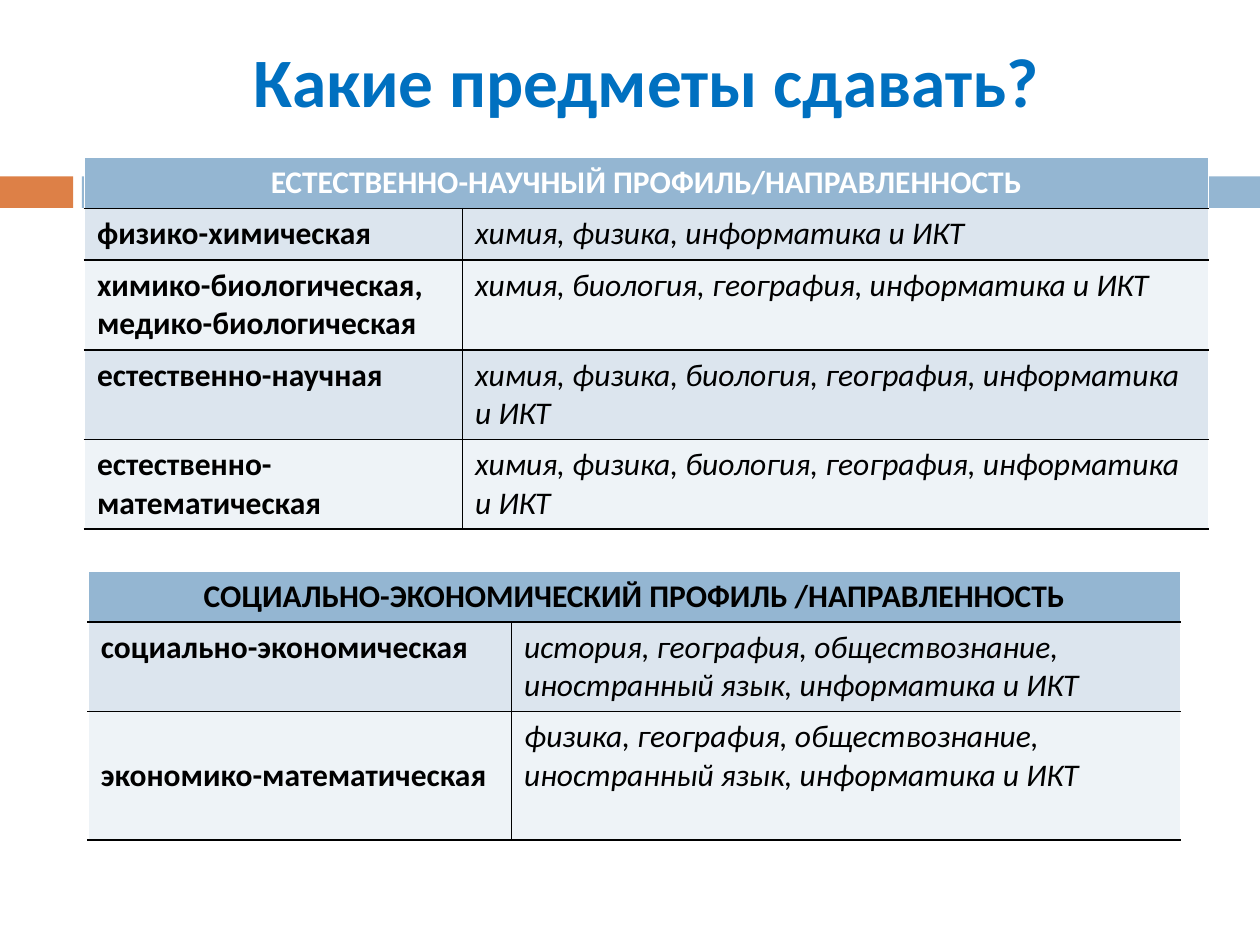
from lxml.etree import SubElement
from pptx import Presentation
from pptx.dml.color import RGBColor
from pptx.enum.shapes import MSO_SHAPE
from pptx.enum.text import MSO_ANCHOR, PP_ALIGN
from pptx.oxml.ns import qn
from pptx.util import Inches, Pt

# Content
TITLE = "Какие предметы сдавать?"
TABLES = [
    {
        "heading": "ЕСТЕСТВЕННО-НАУЧНЫЙ ПРОФИЛЬ/НАПРАВЛЕННОСТЬ",
        "heading_color": "white",
        "rows": [
            ("физико-химическая", "химия, физика, информатика и ИКТ"),
            ("химико-биологическая, медико-биологическая",
             "химия, биология, география, информатика и ИКТ"),
            ("естественно-научная",
             "химия, физика, биология, география, информатика и ИКТ"),
            ("естественно-математическая",
             "химия, физика, биология, география, информатика и ИКТ"),
        ],
        "position": (0.67, 1.25),
        "columns": (3, 5.92),
        "heights": (0.4, 0.41, 0.71, 0.71, 0.71),
        "middle_rows": (),
    },
    {
        "heading": "СОЦИАЛЬНО-ЭКОНОМИЧЕСКИЙ ПРОФИЛЬ /НАПРАВЛЕННОСТЬ",
        "heading_color": "black",
        "rows": [
            ("социально-экономическая",
             "история, география, обществознание, иностранный язык, информатика и ИКТ"),
            ("экономико-математическая",
             "физика, география, обществознание, иностранный язык, информатика и ИКТ"),
        ],
        "position": (0.7, 4.53),
        "columns": (3.36, 5.31),
        "heights": (0.4, 0.71, 1.02),
        "middle_rows": (2,),
    },
]
COLORS = {
    "white": "FFFFFF", "black": "000000", "title": "0070C0",
    "orange": "DD8047", "blue": "94B6D2", "odd": "DCE5EE", "even": "EEF3F7",
}
BANDS = [(0, 0.58, "orange"), (0.65, 9.35, "blue")]  # left, width, colour
FONT = "Calibri"


def rgb(name):
    return RGBColor.from_string(COLORS[name])


def format_text(text_frame, size, color, bold=True, italic=False, align=PP_ALIGN.LEFT):
    for paragraph in text_frame.paragraphs:
        paragraph.alignment = align
        for run in paragraph.runs:
            font = run.font
            font.name, font.size = FONT, Pt(size)
            font.bold, font.italic = bold, italic
            font.color.rgb = rgb(color)


def set_borders(cell, left, right, top, bottom):
    properties = cell._tc.get_or_add_tcPr()
    sides = zip(("lnL", "lnR", "lnT", "lnB"), (left, right, top, bottom))
    for index, (tag, color) in enumerate(sides):
        line = SubElement(properties, qn(f"a:{tag}"), w=str(Pt(1)))
        fill = SubElement(line, qn("a:solidFill"))
        SubElement(fill, qn("a:srgbClr"), val=COLORS[color])
        properties.insert(index, line)


def fill_cell(cell, text, fill, borders, **text_format):
    cell.text_frame.text = text
    format_text(cell.text_frame, 18, **text_format)
    cell.fill.solid()
    cell.fill.fore_color.rgb = rgb(fill)
    set_borders(cell, *borders)


def add_subject_table(slide, data):
    widths, heights = data["columns"], data["heights"]
    box = [Inches(n) for n in (*data["position"], sum(widths), sum(heights))]
    table = slide.shapes.add_table(len(heights), len(widths), *box).table
    for column, width in zip(table.columns, widths):
        column.width = Inches(width)
    for row, height in zip(table.rows, heights):
        row.height = Inches(height)

    # Heading across both columns
    table.cell(0, 0).merge(table.cell(0, 1))
    for column in range(2):
        fill_cell(table.cell(0, column), "" if column else data["heading"], "blue",
                  ("white", "white", "white", "black"),
                  color=data["heading_color"], align=PP_ALIGN.CENTER)

    # Direction on the left, subjects on the right
    for row, texts in enumerate(data["rows"], start=1):
        for column, text in enumerate(texts):
            sides = ("black", "white") if column else ("white", "black")
            fill_cell(table.cell(row, column), text, "odd" if row % 2 else "even",
                      (*sides, "black", "black"),
                      color="black", bold=column == 0, italic=column == 1)
        if row in data["middle_rows"]:
            table.cell(row, 0).vertical_anchor = MSO_ANCHOR.MIDDLE


presentation = Presentation()
presentation.slide_width, presentation.slide_height = Inches(10), Inches(7.5)
slide = presentation.slides.add_slide(presentation.slide_layouts[5])

# Title
title = slide.shapes.title
title.left, title.top = Inches(0.67), Inches(0.25)
title.width, title.height = Inches(8.92), Inches(0.77)
title.text_frame.text = TITLE
title.text_frame.vertical_anchor = MSO_ANCHOR.MIDDLE
format_text(title.text_frame, 39.6, "title", align=PP_ALIGN.CENTER)

# Decorative bands behind the tables
for left, width, color in BANDS:
    band = slide.shapes.add_shape(MSO_SHAPE.RECTANGLE, Inches(left), Inches(1.4),
                                  Inches(width), Inches(0.25))
    band.shadow.inherit = False
    band.fill.solid()
    band.fill.fore_color.rgb = rgb(color)
    band.line.fill.background()

# Tables
for data in TABLES:
    add_subject_table(slide, data)

presentation.save("out.pptx")
